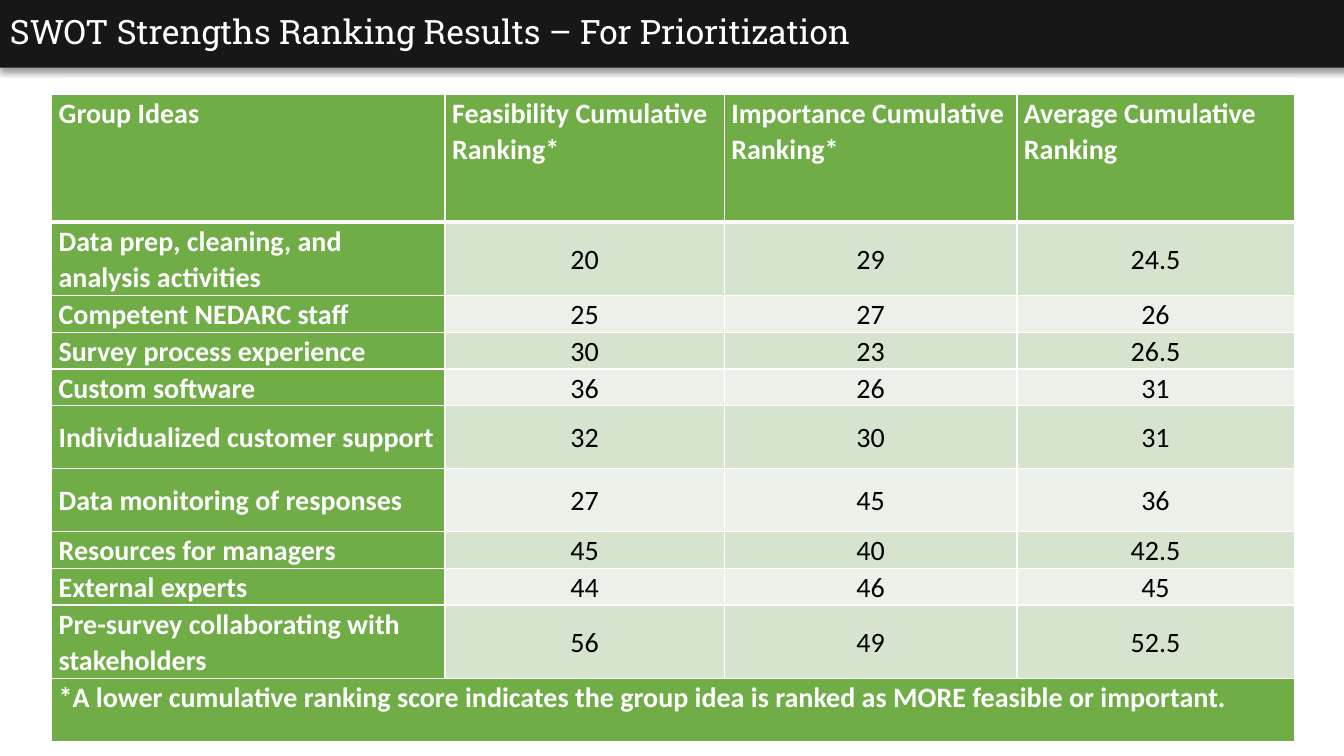
from lxml import etree
from pptx import Presentation
from pptx.dml.color import RGBColor
from pptx.enum import shapes, text
from pptx.oxml import ns
from pptx.util import Pt

TITLE = "SWOT Strengths Ranking Results – For Prioritization"
HEADS = ["Group Ideas", "Feasibility Cumulative Ranking*",
         "Importance Cumulative Ranking*", "Average Cumulative Ranking"]
IDEAS = [
    ("Data prep, cleaning, and analysis activities", "20", "29", "24.5"),
    ("Competent NEDARC staff", "25", "27", "26"),
    ("Survey process experience", "30", "23", "26.5"),
    ("Custom software", "36", "26", "31"),
    ("Individualized customer support", "32", "30", "31"),
    ("Data monitoring of responses", "27", "45", "36"),
    ("Resources for managers", "45", "40", "42.5"),
    ("External experts", "44", "46", "45"),
    ("Pre-survey collaborating with stakeholders", "56", "49", "52.5"),
]
NOTE = ("*A lower cumulative ranking score indicates the group idea "
        "is ranked as MORE feasible or important.")
COLORS = {"bar": "181717", "green": "70AD47", "odd": "D5E3CF",
          "even": "EBF1E9", "white": "FFFFFF", "black": "000000"}
WIDTHS = [281, 199.5, 209, 198]
HEAD, TALL, SHORT = 91.4, 45, 22.5
HEIGHTS = [HEAD, TALL, SHORT, SHORT, SHORT, TALL, TALL, SHORT, SHORT, TALL, TALL]
LEFT, TOP = 36.9, 67.3


def color(name):
    return RGBColor.from_string(COLORS[name])


def paint(item, name):
    item.fill.solid()
    item.fill.fore_color.rgb = color(name)


def write(para, words, size, font, tint, bold=False):
    run = para.add_run()
    run.text = words
    run.font.size = Pt(size)
    run.font.name = font
    run.font.bold = bold
    run.font.color.rgb = color(tint)


def edge(cell, bottom):
    """Draw white borders, which must come before the fill in the cell XML."""
    props = cell._tc.get_or_add_tcPr()
    for i, (side, wide) in enumerate([("L", 1), ("R", 1), ("T", 1), ("B", bottom)]):
        line = etree.Element(ns.qn("a:ln" + side), w=str(Pt(wide)))
        solid = etree.SubElement(line, ns.qn("a:solidFill"))
        etree.SubElement(solid, ns.qn("a:srgbClr"), val=COLORS["white"])
        props.insert(i, line)


def shade(shape):
    """Add a soft shadow straight below the shape."""
    shape.shadow.inherit = False
    list_ = shape._element.spPr.find(ns.qn("a:effectLst"))
    outer = etree.SubElement(list_, ns.qn("a:outerShdw"), blurRad=str(Pt(4)),
                             dist=str(Pt(3)), dir="5400000", algn="t", rotWithShape="0")
    tint = etree.SubElement(outer, ns.qn("a:srgbClr"), val=COLORS["black"])
    etree.SubElement(tint, ns.qn("a:alpha"), val="40000")


def add_bar(slide):
    bar = slide.shapes.add_shape(shapes.MSO_SHAPE.RECTANGLE,
                                 Pt(0), Pt(-4.3), Pt(966), Pt(52.6))
    paint(bar, "bar")
    bar.line.fill.background()
    shade(bar)
    frame = bar.text_frame
    frame.word_wrap = True
    frame.vertical_anchor = text.MSO_ANCHOR.MIDDLE
    frame.paragraphs[0].alignment = text.PP_ALIGN.LEFT
    write(frame.paragraphs[0], TITLE, 24, "Roboto Slab", "white")


def add_ranks(slide):
    rows = [HEADS, *IDEAS, (NOTE, "", "", "")]
    last = len(rows) - 1
    table = slide.shapes.add_table(len(rows), len(WIDTHS), Pt(LEFT), Pt(TOP),
                                   Pt(sum(WIDTHS)), Pt(sum(HEIGHTS))).table
    for col, wide in zip(table.columns, WIDTHS):
        col.width = Pt(wide)
    for row, high in zip(table.rows, HEIGHTS):
        row.height = Pt(high)
    table.cell(last, 0).merge(table.cell(last, len(WIDTHS) - 1))
    for r, row in enumerate(rows):
        for c, words in enumerate(row):
            cell = table.cell(r, c)
            body = 0 < r < last
            score = body and c > 0
            band = "odd" if r % 2 else "even"
            paint(cell, band if score else "green")
            edge(cell, 1 if r else 3)
            cell.margin_left = cell.margin_right = Pt(5)
            cell.margin_top = cell.margin_bottom = Pt(0)
            cell.vertical_anchor = text.MSO_ANCHOR.MIDDLE if body else text.MSO_ANCHOR.TOP
            para = cell.text_frame.paragraphs[0]
            para.line_spacing = 1.07
            para.alignment = text.PP_ALIGN.CENTER if score else text.PP_ALIGN.LEFT
            if words:
                write(para, words, 20, "Calibri", "black" if score else "white", not score)


def main():
    deck = Presentation()
    deck.slide_width, deck.slide_height = Pt(960), Pt(540)
    slide = deck.slides.add_slide(deck.slide_layouts[6])
    add_bar(slide)
    add_ranks(slide)
    deck.save("out.pptx")


if __name__ == "__main__":
    main()
